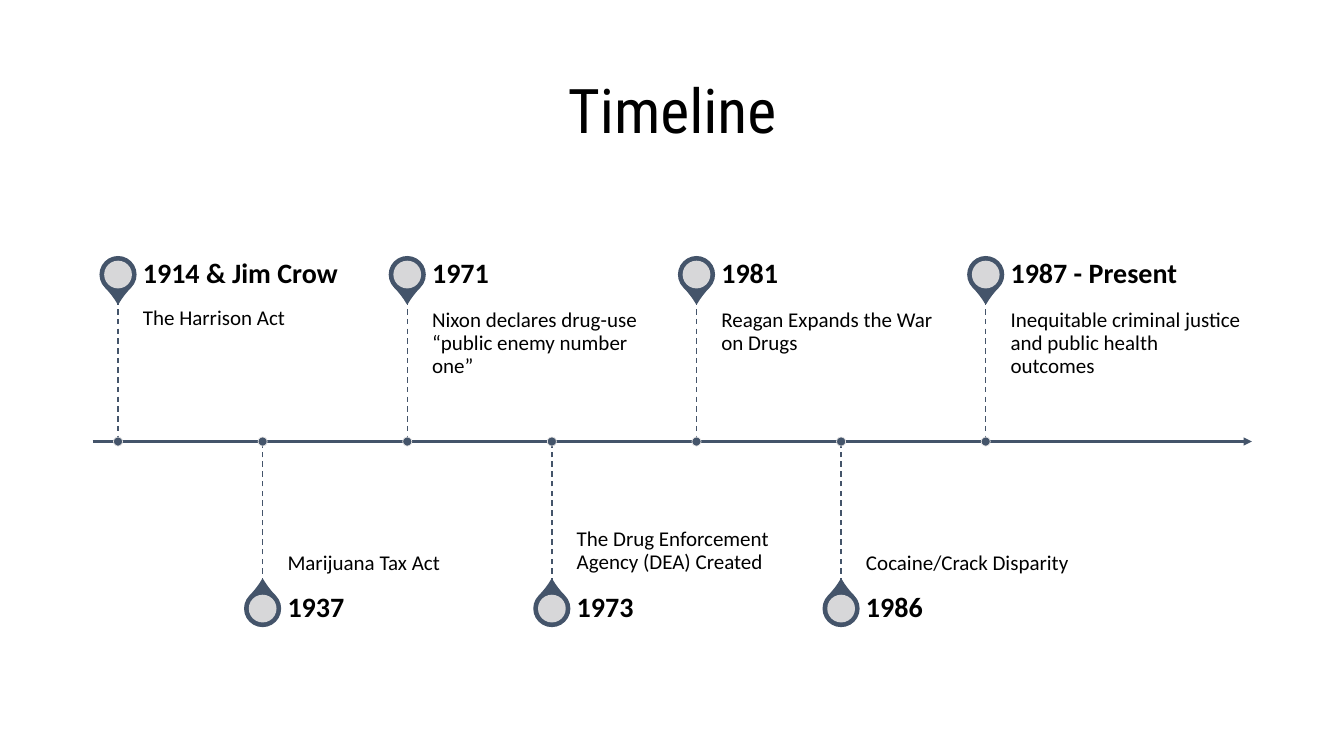
from lxml.etree import SubElement
from pptx import Presentation
from pptx.dml.color import RGBColor
from pptx.enum.dml import MSO_LINE
from pptx.enum.shapes import MSO_CONNECTOR, MSO_SHAPE
from pptx.enum.text import MSO_ANCHOR, PP_ALIGN
from pptx.oxml.ns import qn
from pptx.util import Pt

SLATE = RGBColor(0x44, 0x54, 0x6A)
LIGHT = RGBColor(0xE7, 0xE6, 0xE6)
BLACK = RGBColor(0, 0, 0)

SLIDE_WIDTH, SLIDE_HEIGHT = 960, 540
TITLE_BOX = (66.2, 28.8, 828, 104.4)
TIMELINE_BOX = (66.2, 178.1, 828, 274.6)  # left, top, width, height

FIRST_STOP, STOP_STEP = 18.1, 103.3
STEM, HEADER = 101.5, 35.8
LABEL_GAP, LABEL_WIDTH = 17.8, 172
PIN, PIN_CENTRE, DOT = 25.5, 19.3, 6.5

EVENTS = [
    ("1914 & Jim Crow", "The Harrison Act"),
    ("1937", "Marijuana Tax Act"),
    ("1971", "Nixon declares drug-use “public enemy number one”"),
    ("1973", "The Drug Enforcement Agency (DEA) Created"),
    ("1981", "Reagan Expands the War on Drugs"),
    ("1986", "Cocaine/Crack Disparity"),
    ("1987 - Present", "Inequitable criminal justice and public health outcomes"),
]


def set_attributes(target, values):
    for name, value in values.items():
        setattr(target, name, value)


def write_text(frame, text, font, margins=(), **layout):
    """Fill a text frame; margins are left, top, right, bottom."""
    set_attributes(frame, {"word_wrap": True, **layout})
    for side, margin in zip(("left", "top", "right", "bottom"), margins):
        setattr(frame, f"margin_{side}", Pt(margin))
    paragraph = frame.paragraphs[0]
    paragraph.line_spacing = 0.9
    run = paragraph.add_run()
    run.text = text
    set_attributes(run.font, font)
    run.font.color.rgb = BLACK
    return paragraph


def add_label(slide, box, text, font, margins, anchor):
    shape = slide.shapes.add_textbox(*map(Pt, box))
    write_text(shape.text_frame, text, {"name": "Calibri", **font},
               margins, vertical_anchor=anchor)


def add_line(slide, start, end, width, dash=None, arrow=False):
    line = slide.shapes.add_connector(MSO_CONNECTOR.STRAIGHT, *map(Pt, start + end))
    line.line.color.rgb = SLATE
    set_attributes(line.line, {"width": Pt(width), "dash_style": dash})
    if arrow:
        SubElement(line.line._get_or_add_ln(), qn("a:tailEnd"), type="triangle")
    SubElement(line._element.spPr, qn("a:effectLst"))


def add_centred(slide, kind, centre, size, fill, outline=None, width=1):
    x, y = centre
    shape = slide.shapes.add_shape(
        kind, Pt(x - size / 2), Pt(y - size / 2), Pt(size), Pt(size))
    shape.shadow.inherit = False
    shape.fill.solid()
    shape.fill.fore_color.rgb = fill
    if outline is None:
        shape.line.fill.background()
    else:
        shape.line.color.rgb = outline
        shape.line.width = Pt(width)
    return shape


def add_pin(slide, centre, rotation):
    drop = add_centred(slide, MSO_SHAPE.TEAR, centre, PIN, SLATE, SLATE)
    drop.rotation = rotation
    drop.adjustments[0] = 1.15
    disc = add_centred(slide, MSO_SHAPE.OVAL, centre, 19.8, LIGHT)
    colour = disc._element.spPr.find(qn("a:solidFill"))[0]
    SubElement(colour, qn("a:alpha"), val="90000")


def add_title(slide, box):
    title = slide.shapes.title
    set_attributes(title, dict(zip(("left", "top", "width", "height"), map(Pt, box))))
    paragraph = write_text(title.text_frame, "Timeline",
                           {"name": "Roboto Condensed", "size": Pt(44)},
                           vertical_anchor=MSO_ANCHOR.MIDDLE)
    paragraph.alignment = PP_ALIGN.CENTER


def add_event(slide, x, axis, above, heading, detail):
    """One stop on the axis, with its pin and labels above or below."""
    side = -1 if above else 1
    tip = axis + side * STEM
    left = x + LABEL_GAP
    add_pin(slide, (x, tip + side * (PIN_CENTRE - 1.5)), 135 if above else 315)

    # Labels
    add_label(slide, (left, min(axis, tip), LABEL_WIDTH, STEM), detail,
              {"size": Pt(15)},
              (0, 7.2, 7.2, 11.5) if above else (0, 11.5, 0, 7.2),
              MSO_ANCHOR.TOP if above else MSO_ANCHOR.BOTTOM)
    add_label(slide, (left, min(tip, tip + side * HEADER), LABEL_WIDTH, HEADER),
              heading, {"size": Pt(20), "bold": True}, (0, 0, 10, 0),
              MSO_ANCHOR.MIDDLE)

    # Stem and its dot on the axis
    add_line(slide, (x, tip), (x, axis), 1, MSO_LINE.DASH)
    add_centred(slide, MSO_SHAPE.OVAL, (x, axis), DOT, SLATE, LIGHT, 0.5)


def add_timeline(slide, box):
    left, top, width, height = box
    axis = top + height / 2
    add_line(slide, (left, axis), (left + width, axis), 1.5, arrow=True)
    for index, (heading, detail) in enumerate(EVENTS):
        x = left + FIRST_STOP + index * STOP_STEP
        add_event(slide, x, axis, index % 2 == 0, heading, detail)


def main():
    presentation = Presentation()
    set_attributes(presentation, {"slide_width": Pt(SLIDE_WIDTH),
                                  "slide_height": Pt(SLIDE_HEIGHT)})
    slide = presentation.slides.add_slide(presentation.slide_layouts[5])
    add_title(slide, TITLE_BOX)
    add_timeline(slide, TIMELINE_BOX)
    presentation.save("out.pptx")


if __name__ == "__main__":
    main()
